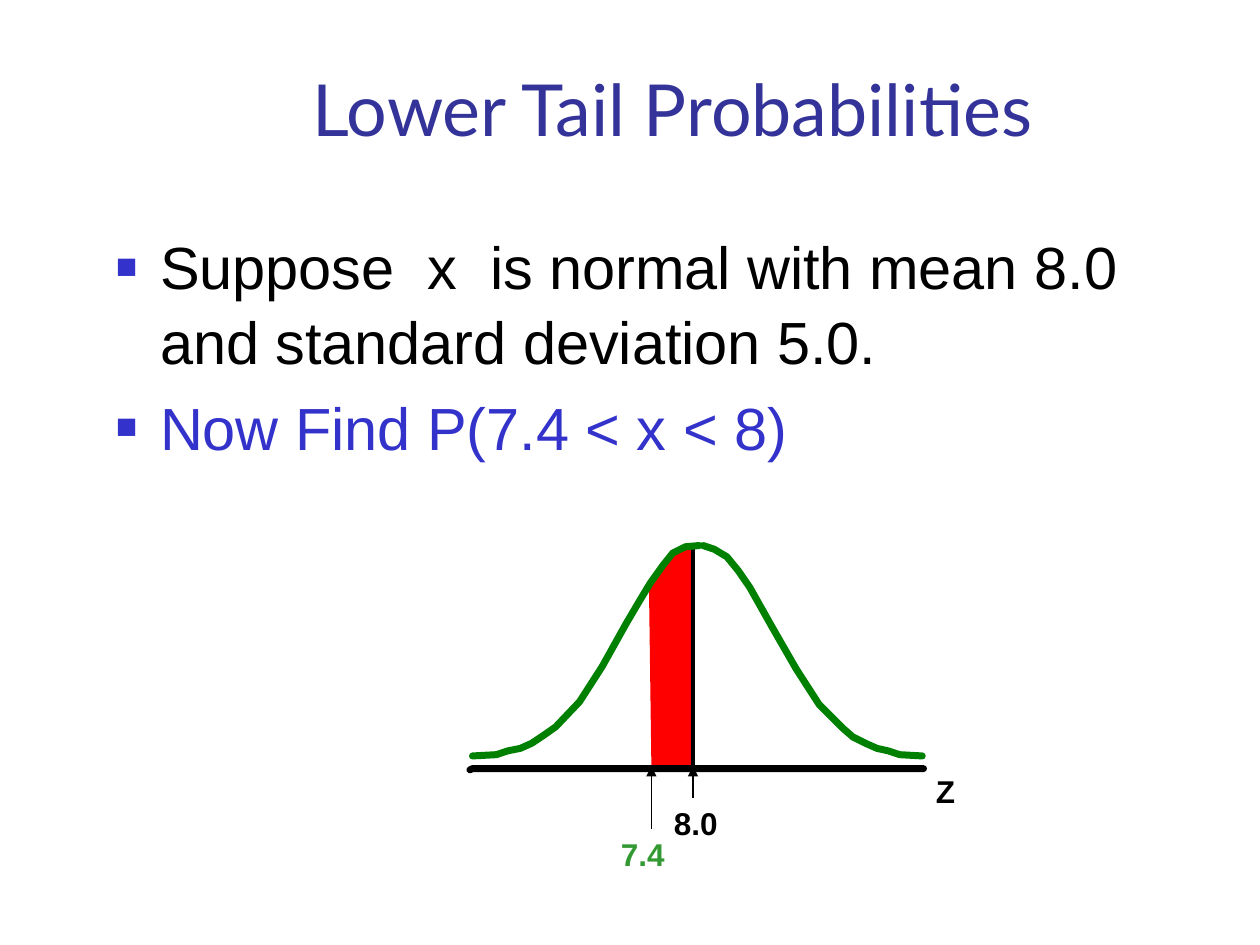
from lxml.etree import SubElement
from pptx import Presentation
from pptx.dml.color import RGBColor
from pptx.enum.shapes import MSO_CONNECTOR
from pptx.enum.text import MSO_ANCHOR, MSO_AUTO_SIZE, PP_ALIGN
from pptx.oxml.ns import qn
from pptx.util import Inches, Pt


def color(hex_value):
    return RGBColor.from_string(hex_value)


def write(paragraph, text, size, hex_value, font="Arial", bold=False):
    run = paragraph.add_run()
    run.text = text
    formats = {"name": font, "size": Pt(size), "bold": bold}
    for attribute, value in formats.items():
        setattr(run.font, attribute, value)
    run.font.color.rgb = color(hex_value)


presentation = Presentation()
presentation.slide_width, presentation.slide_height = Inches(10), Inches(7.5)
slide = presentation.slides.add_slide(presentation.slide_layouts[1])
shapes = slide.shapes

# Title and body placeholders
heading, statement = shapes.title, slide.placeholders[1]
for holder, box, anchor in [
    (heading, (1.08, 0.42, 8.52, 0.83), MSO_ANCHOR.BOTTOM),
    (statement, (0.83, 1.75, 8.83, 4.5), MSO_ANCHOR.TOP),
]:
    holder.left, holder.top, holder.width, holder.height = map(Inches, box)
    frame_formats = {
        "vertical_anchor": anchor, "auto_size": MSO_AUTO_SIZE.NONE, "word_wrap": True,
        "margin_left": Inches(0.09), "margin_right": Inches(0.09),
        "margin_top": Inches(0.05), "margin_bottom": Inches(0.05),
    }
    for attribute, value in frame_formats.items():
        setattr(holder.text_frame, attribute, value)

heading_line = heading.text_frame.paragraphs[0]
heading_line.alignment = PP_ALIGN.CENTER
write(heading_line, "Lower Tail Probabilities", 41, "333399", "Lato")

# Bulleted problem statement
problem = [
    ("Suppose  x  is normal with mean 8.0 and standard deviation 5.0.", "000000", 0),
    ("Now Find P(7.4 < x < 8)", "3333CC", 6),
]
for index, (text, hex_value, gap) in enumerate(problem):
    frame = statement.text_frame
    item = frame.add_paragraph() if index else frame.paragraphs[0]
    properties = item._p.get_or_add_pPr()
    properties.set("marL", str(Inches(0.35)))
    properties.set("indent", str(Inches(-0.35)))
    bullet_color = SubElement(properties, qn("a:buClr"))
    SubElement(bullet_color, qn("a:srgbClr"), val="3333CC")
    SubElement(properties, qn("a:buSzPct"), val="60000")
    SubElement(properties, qn("a:buFont"), typeface="Arial")
    SubElement(properties, qn("a:buChar"), char="■")
    item.space_before, item.line_spacing = Pt(gap), 1.05
    write(item, text, 34, hex_value)

# Shaded area, mean line, both halves of the bell curve, and the axis
mean_x, value_x, peak_y, base_y = 5.5, 5.17, 4.33, 6.08
shaded_area = [
    (value_x, base_y), (5.15, 4.62), (5.2, 4.55), (5.26, 4.47), (5.32, 4.41),
    (5.37, 4.37), (5.42, peak_y), (mean_x, peak_y), (mean_x, base_y),
]
right_half = [
    (7.32, 6), (7.14, 5.99), (7.05, 5.96), (6.96, 5.94), (6.87, 5.9), (6.77, 5.85),
    (6.69, 5.78), (6.5, 5.59), (6.32, 5.31), (6.13, 4.98), (6.04, 4.82), (5.95, 4.66),
    (5.86, 4.53), (5.77, 4.42), (5.67, 4.36), (5.58, peak_y),
]
left_half = [
    (3.75, 6), (3.94, 5.99), (4.03, 5.96), (4.13, 5.94), (4.22, 5.9), (4.31, 5.84),
    (4.41, 5.77), (4.6, 5.57), (4.78, 5.29), (4.97, 4.95), (5.07, 4.78), (5.16, 4.63),
    (5.26, 4.49), (5.34, 4.39), (5.44, 4.34), (5.55, peak_y),
]
axis = [(3.73, 6.11), (3.75, 6.1), (7.33, 6.1)]
mean_line = [(mean_x, peak_y), (mean_x, base_y)]
mean_arrow = [(mean_x, 6.33), (mean_x, base_y)]
value_arrow = [(value_x, 6.58), (value_x, base_y)]


# Straight lines and outlines, from back to front
for points, fill, stroke, weight, arrow in [
    (shaded_area, "FF0000", None, 0, False),
    (mean_line, None, "000000", 2.5, False),
    (right_half, None, "008000", 4, False),
    (left_half, None, "008000", 4, False),
    (axis, None, "000000", 4, False),
    (mean_arrow, None, "000000", 1, True),
    (value_arrow, None, "000000", 1, True),
]:
    start, *rest = [(Inches(x), Inches(y)) for x, y in points]
    if len(points) == 2:
        part = shapes.add_connector(MSO_CONNECTOR.STRAIGHT, *start, *rest[0])
        SubElement(part._element.spPr, qn("a:effectLst"))
    else:
        outline = shapes.build_freeform(*start)
        outline.add_line_segments(rest, close=fill is not None)
        part = outline.convert_to_shape()
        part.shadow.inherit = False
        if fill:
            part.fill.solid()
            part.fill.fore_color.rgb = color(fill)
        else:
            part.fill.background()
    if not stroke:
        part.line.fill.background()
        continue
    part.line.color.rgb = color(stroke)
    part.line.width = Pt(weight)
    line_properties = part.line._get_or_add_ln()
    if arrow:
        SubElement(line_properties, qn("a:tailEnd"), type="triangle")
    elif len(points) > 2:
        line_properties.set("cap", "rnd")
        SubElement(line_properties, qn("a:round"))

# Axis and value labels
for text, left, top, width, hex_value, wrap in [
    ("Z", 7.33, 6.08, 0.42, "000000", True),
    ("7.4", 4.83, 6.58, 0.55, "339933", False),
    ("8.0", 5.25, 6.33, 0.55, "000000", False),
]:
    label = shapes.add_textbox(Inches(left), Inches(top), Inches(width), Inches(0.4))
    label.text_frame.word_wrap = wrap
    label.text_frame.auto_size = MSO_AUTO_SIZE.SHAPE_TO_FIT_TEXT
    write(label.text_frame.paragraphs[0], text, 18, hex_value, bold=True)

presentation.save("out.pptx")
